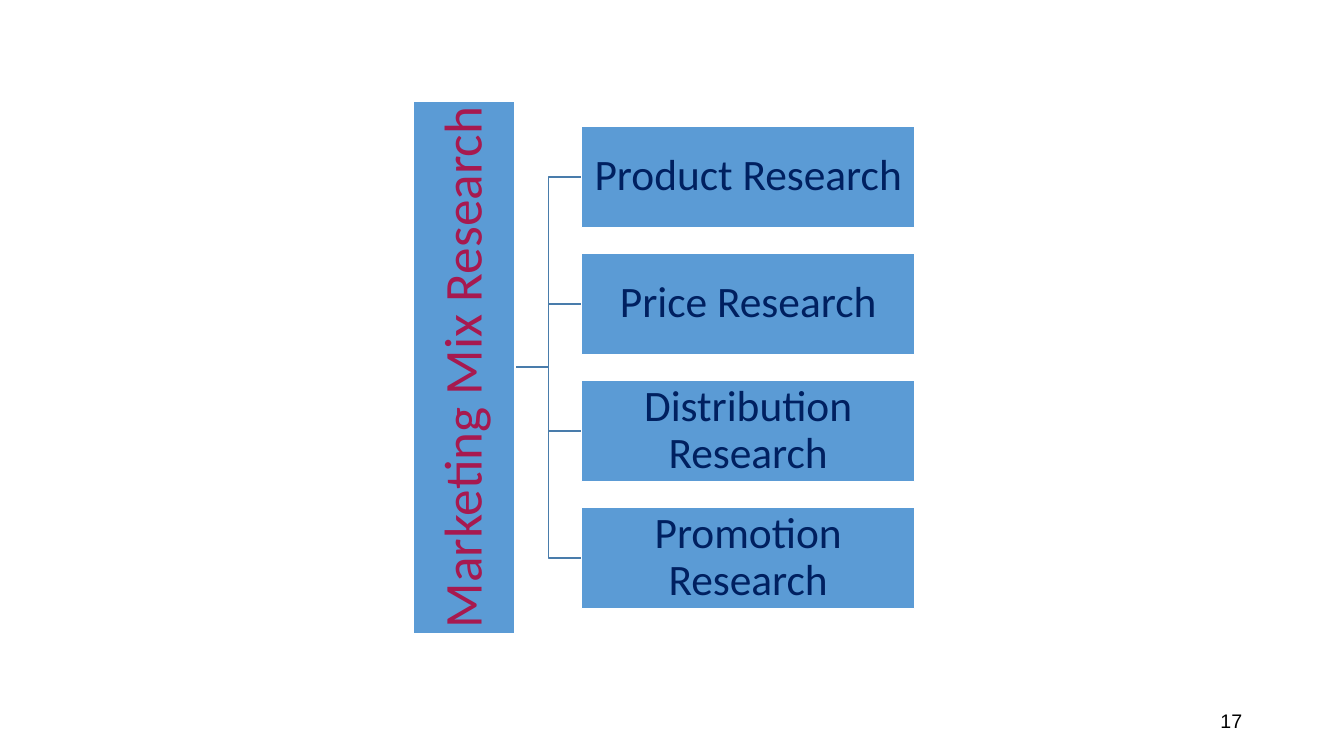
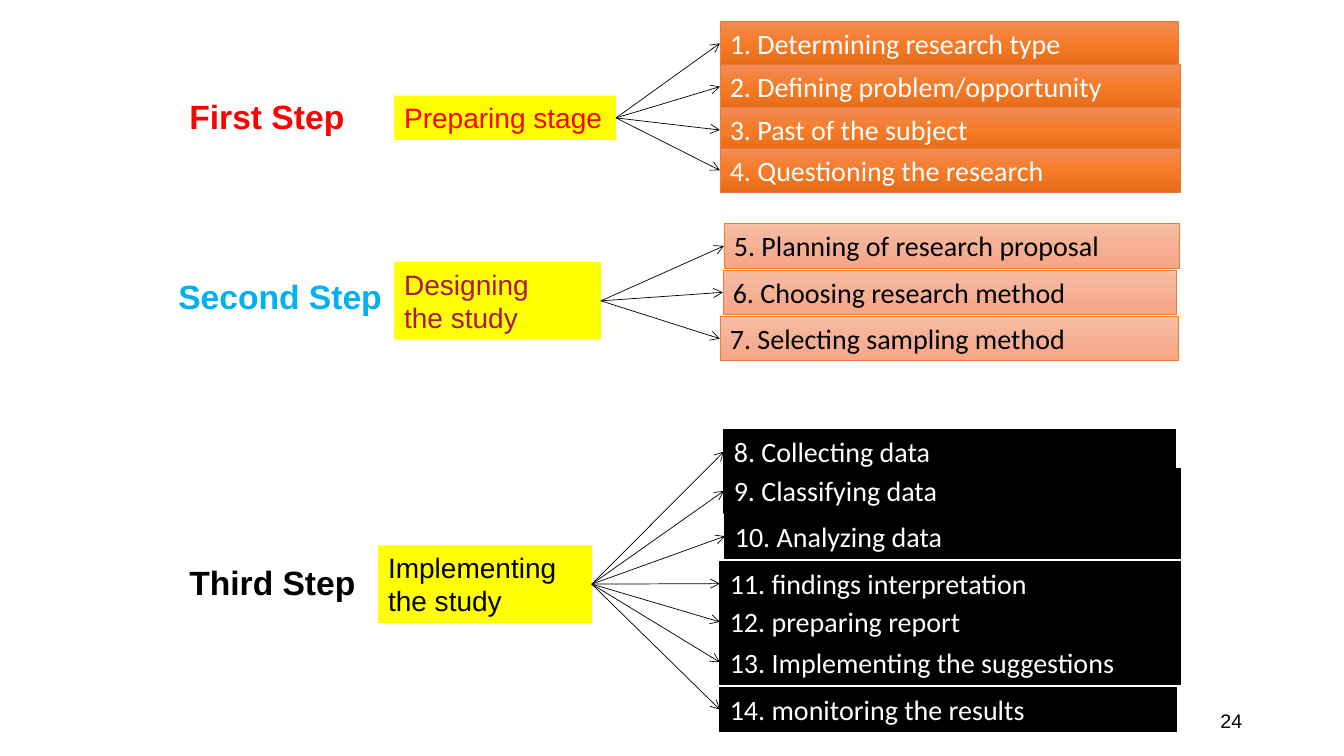
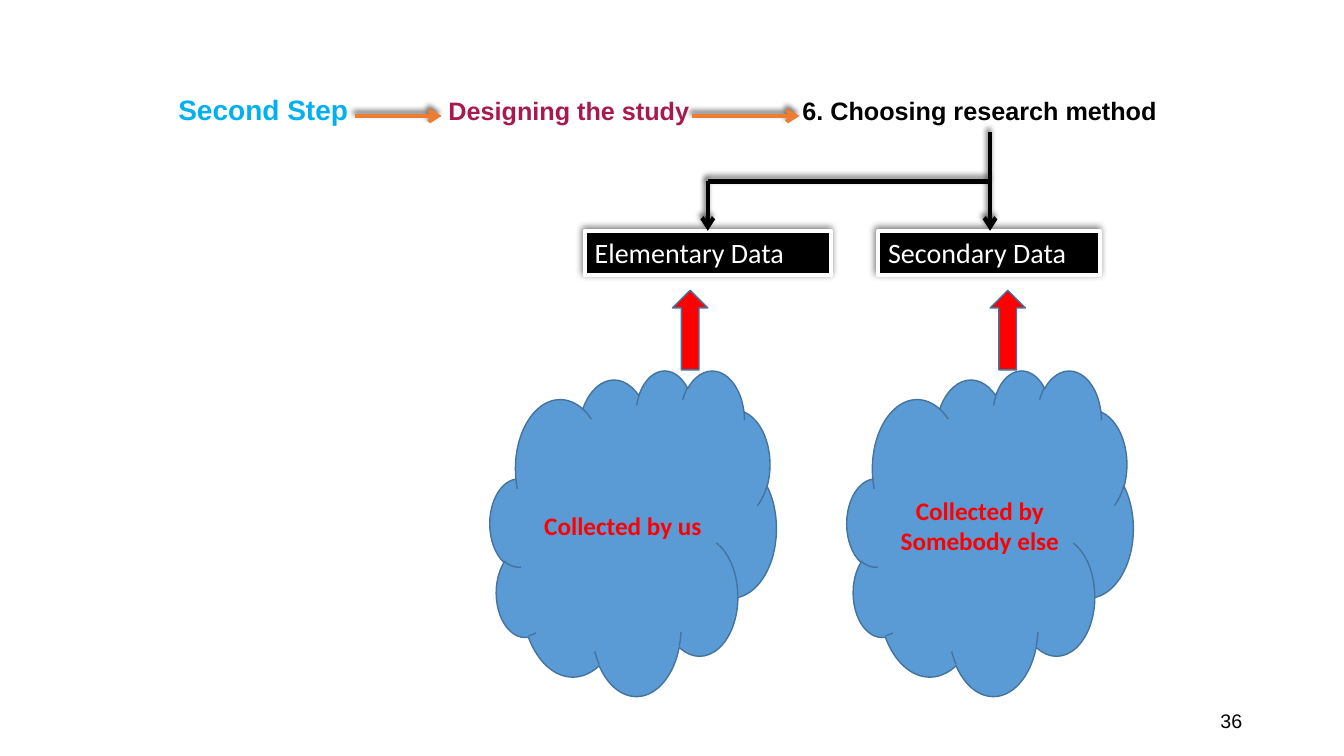
import lxml.etree
import pptx
import pptx.dml.color
import pptx.enum.shapes
import pptx.enum.text
import pptx.oxml
import pptx.oxml.ns
import pptx.util

Inches = pptx.util.Inches
Pt = pptx.util.Pt
RGBColor = pptx.dml.color.RGBColor
Shape = pptx.enum.shapes.MSO_SHAPE
Connector = pptx.enum.shapes.MSO_CONNECTOR
Align = pptx.enum.text.PP_ALIGN
Anchor = pptx.enum.text.MSO_ANCHOR
qn = pptx.oxml.ns.qn

BLACK = RGBColor(0x00, 0x00, 0x00)
WHITE = RGBColor(0xFF, 0xFF, 0xFF)
RED = RGBColor(0xFF, 0x00, 0x00)
YELLOW = RGBColor(0xFF, 0xFF, 0x00)
SKY = RGBColor(0x00, 0xB0, 0xF0)
CRIMSON = RGBColor(0xA7, 0x19, 0x4F)
NAVY = RGBColor(0x00, 0x20, 0x60)
BLUE = RGBColor(0x5B, 0x9B, 0xD5)
BLUE_EDGE = RGBColor(0x43, 0x73, 0x9E)
BLUE_LINK = RGBColor(0x49, 0x7C, 0xAB)
ORANGE = RGBColor(0xED, 0x7D, 0x31)
# Gradients run from top to bottom.
STRONG_ORANGE = (RGBColor(0xF1, 0x8C, 0x57), RGBColor(0xF6, 0x7B, 0x28), RGBColor(0xE5, 0x6C, 0x19))
PALE_ORANGE = (RGBColor(0xF7, 0xBD, 0xA5), RGBColor(0xF5, 0xB1, 0x96), RGBColor(0xF8, 0xA5, 0x82))

HEADING_FONT = "Arial"
BODY_FONT = "Calibri"
ROW_HEIGHT = 0.44

# Shadows: opacity in percent, blur and distance in points.
BOX_SHADOW = (50, 5, 2)
LINE_SHADOW = (60, 4, 3)
SHADOW_ANGLE = 245


class Deck:
    def __init__(self):
        self.file = pptx.Presentation()
        self.file.slide_width = Inches(13.33)
        self.file.slide_height = Inches(7.5)
        self.page = None

    def new_page(self, number):
        self.page = self.file.slides.add_slide(self.file.slide_layouts[6])
        self.label(9.42, 6.95, 3, 0.4, [[(str(number), 14, BLACK)]],
                   align=Align.RIGHT, anchor=Anchor.MIDDLE)

    def add_text(self, box, paras, font, bold=False, align=Align.LEFT, anchor=Anchor.TOP,
                 inset=None, spacing=None):
        """Fill a shape with paragraphs, each a list of (text, size, colour) runs."""
        frame = box.text_frame
        frame.word_wrap = True
        frame.vertical_anchor = anchor
        if inset is not None:
            frame.margin_left = frame.margin_right = Inches(inset)
            frame.margin_top = frame.margin_bottom = Inches(inset)
        for index, runs in enumerate(paras):
            para = frame.add_paragraph() if index else frame.paragraphs[0]
            para.alignment = align
            if spacing:
                para.line_spacing = spacing
            for text, size, color in runs:
                span = para.add_run()
                span.text = text
                span.font.name = font
                span.font.size = Pt(size)
                span.font.bold = bold
                span.font.color.rgb = color

    def label(self, left, top, width, height, paras, **style):
        box = self.page.shapes.add_textbox(Inches(left), Inches(top), Inches(width), Inches(height))
        self.add_text(box, paras, HEADING_FONT, **style)
        return box

    def shape(self, kind, left, top, width, height, fill, edge=None, weight=1, shadow=None):
        box = self.page.shapes.add_shape(kind, Inches(left), Inches(top), Inches(width), Inches(height))
        if isinstance(fill, list):
            self.fill_gradient(box, fill)
        else:
            box.fill.solid()
            box.fill.fore_color.rgb = fill
        if edge is None:
            box.line.fill.background()
        else:
            box.line.color.rgb = edge
            box.line.width = Pt(weight)
        self.set_shadow(box, shadow)
        return box

    def line(self, start, end, color, weight, kind=Connector.STRAIGHT, arrow=False, shadow=None):
        link = self.page.shapes.add_connector(kind, *(Inches(value) for value in start + end))
        link.line.color.rgb = color
        link.line.width = Pt(weight)
        if arrow:
            outline = link.element.spPr.find(qn("a:ln"))
            lxml.etree.SubElement(outline, qn("a:tailEnd"), type="arrow")
        self.set_shadow(link, shadow)

    def fill_gradient(self, box, colors):
        box.fill.background()
        stops = "".join(
            f'<a:gs pos="{index * 50000}"><a:srgbClr val="{color}"/></a:gs>'
            for index, color in enumerate(colors))
        gradient = pptx.oxml.parse_xml(
            f'<a:gradFill {pptx.oxml.ns.nsdecls("a")} rotWithShape="1">'
            f'<a:gsLst>{stops}</a:gsLst><a:lin ang="5400000" scaled="0"/></a:gradFill>')
        properties = box.element.spPr
        properties.replace(properties.find(qn("a:noFill")), gradient)

    def set_shadow(self, item, shadow):
        """Replace the theme's shadow by the given one, or by none."""
        effects = lxml.etree.SubElement(item.element.spPr, qn("a:effectLst"))
        if shadow:
            opacity, blur, distance = shadow
            outer = lxml.etree.SubElement(
                effects, qn("a:outerShdw"), blurRad=str(int(Pt(blur))), dist=str(int(Pt(distance))),
                dir=str(SHADOW_ANGLE * 60000), rotWithShape="0")
            color = lxml.etree.SubElement(outer, qn("a:srgbClr"), val=str(BLACK))
            lxml.etree.SubElement(color, qn("a:alpha"), val=str(opacity * 1000))

    def set_tabs(self, box, stops):
        properties = box.text_frame.paragraphs[0]._p.get_or_add_pPr()
        tabs = lxml.etree.SubElement(properties, qn("a:tabLst"))
        for stop in stops:
            lxml.etree.SubElement(tabs, qn("a:tab"), pos=str(int(Inches(stop))), algn="l")


def build_mix_tree(deck):
    deck.new_page(17)
    middle, root_right, branch_left = 3.64, 5.11, 5.77
    branch_height, pitch = 1.01, 1.26
    topics = ["Product Research", "Price Research", "Distribution Research", "Promotion Research"]
    tops = [1.25 + index * pitch for index in range(len(topics))]
    for top in tops:
        deck.line((root_right, middle), (branch_left, top + branch_height / 2),
                  BLUE_LINK, 1, kind=Connector.ELBOW)
    centred = {"align": Align.CENTER, "anchor": Anchor.MIDDLE, "spacing": 0.9}
    root = deck.shape(Shape.RECTANGLE, 1.96, 3.14, 5.29, branch_height, BLUE, WHITE)
    root.rotation = 270
    deck.add_text(root, [[("Marketing Mix Research", 38, CRIMSON)]], BODY_FONT, inset=0.03, **centred)
    for top, topic in zip(tops, topics):
        branch = deck.shape(Shape.RECTANGLE, branch_left, top, 3.3, branch_height, BLUE, WHITE)
        deck.add_text(branch, [[(topic, 31, NAVY)]], BODY_FONT, inset=0.02, **centred)


# Each step: heading, stage box, and style and rows (left, top, width, text) of its tasks.
STEPS = [
    {"heading": ("First Step", RED, 1.78, 0.9, 1.89),
     "stage": (["Preparing stage"], RED, 3.91, 0.95, 2.2, 0.44),
     "style": (list(STRONG_ORANGE), ORANGE, 0.5, WHITE),
     "tasks": [(7.14, 0.21, 4.55, "1. Determining research type"),
               (7.14, 0.64, 4.57, "2. Defining problem/opportunity"),
               (7.14, 1.07, 4.57, "3. Past of the subject"),
               (7.14, 1.47, 4.57, "4. Questioning the research")]},
    {"heading": ("Second Step", SKY, 1.67, 2.69, 2.32),
     "stage": (["Designing", "the study"], CRIMSON, 3.91, 2.6, 2.05, 0.77),
     "style": (list(PALE_ORANGE), ORANGE, 0.5, BLACK),
     "tasks": [(7.18, 2.22, 4.52, "5. Planning of research proposal"),
               (7.17, 2.68, 4.5, "6. Choosing research method"),
               (7.14, 3.14, 4.55, "7. Selecting sampling method")]},
    {"heading": ("Third Step", BLACK, 1.78, 5.53, 1.97),
     "stage": (["Implementing", "the study"], BLACK, 3.75, 5.41, 2.12, 0.77),
     "style": (BLACK, BLACK, 1, WHITE),
     "tasks": [(7.18, 4.26, 4.48, "8. Collecting data"),
               (7.18, 4.65, 4.53, "9. Classifying data"),
               (7.19, 5.1, 4.52, "10. Analyzing data"),
               (7.14, 5.57, 4.57, "11. findings interpretation"),
               (7.14, 5.95, 4.57, "12. preparing report"),
               (7.14, 6.35, 4.57, "13. Implementing the suggestions"),
               (7.14, 6.82, 4.53, "14. monitoring the results")]},
]


def build_steps(deck):
    deck.new_page(24)
    for step in STEPS:
        heading, color, left, top, width = step["heading"]
        deck.label(left, top, width, 0.5, [[(heading, 24, color)]], bold=True)

        lines, color, left, top, width, height = step["stage"]
        stage = deck.shape(Shape.RECTANGLE, left, top, width, height, YELLOW)
        deck.add_text(stage, [[(text, 20, color)] for text in lines], HEADING_FONT)
        fan_start = (left + width, top + height / 2)

        fill, edge, weight, color = step["style"]
        for left, top, width, text in step["tasks"]:
            task = deck.shape(Shape.RECTANGLE, left, top, width, ROW_HEIGHT, fill, edge, weight)
            deck.add_text(task, [[(text, 20, color)]], BODY_FONT)
            deck.line(fan_start, (left, top + ROW_HEIGHT / 2), BLACK, 0.5, arrow=True)


def build_research_method(deck):
    deck.new_page(36)
    trail = deck.label(1.67, 0.87, 10, ROW_HEIGHT, [[
        ("Second Step\t", 20, SKY),
        ("Designing the study\t", 18, CRIMSON),
        ("6. Choosing research method", 18, BLACK)]], bold=True)
    deck.set_tabs(trail, [2.68, 6.19])

    for left, width, text in [(8.71, 2.2, "Secondary Data"), (5.8, 2.44, "Elementary Data")]:
        data = deck.shape(Shape.RECTANGLE, left, 2.29, width, ROW_HEIGHT, BLACK, WHITE, 3, BOX_SHADOW)
        deck.add_text(data, [[(text, 20, WHITE)]], BODY_FONT)

    for start, end, color, arrow in [
            ((9.82, 1.8), (7.02, 1.8), BLACK, False),
            ((7.02, 1.8), (7.02, 2.29), BLACK, True),
            ((9.82, 1.31), (9.82, 2.29), BLACK, True),
            ((3.52, 1.15), (4.38, 1.15), ORANGE, True),
            ((6.86, 1.15), (7.93, 1.15), ORANGE, True)]:
        deck.line(start, end, color, 3, arrow=arrow, shadow=LINE_SHADOW)

    for cloud_left, arrow_left, text in [
            (4.86, 6.67, "Collected by us"),
            (8.4, 9.82, "Collected by Somebody else")]:
        cloud = deck.shape(Shape.CLOUD, cloud_left, 3.67, 2.84, 3.23, BLUE, BLUE_EDGE)
        deck.add_text(cloud, [[(text, 18, RED)]], BODY_FONT, bold=True,
                      align=Align.CENTER, anchor=Anchor.MIDDLE)
        deck.shape(Shape.UP_ARROW, arrow_left, 2.88, 0.35, 0.79, RED, BLUE_EDGE)


def main():
    deck = Deck()
    build_mix_tree(deck)
    build_steps(deck)
    build_research_method(deck)
    deck.file.save("out.pptx")


if __name__ == "__main__":
    main()
